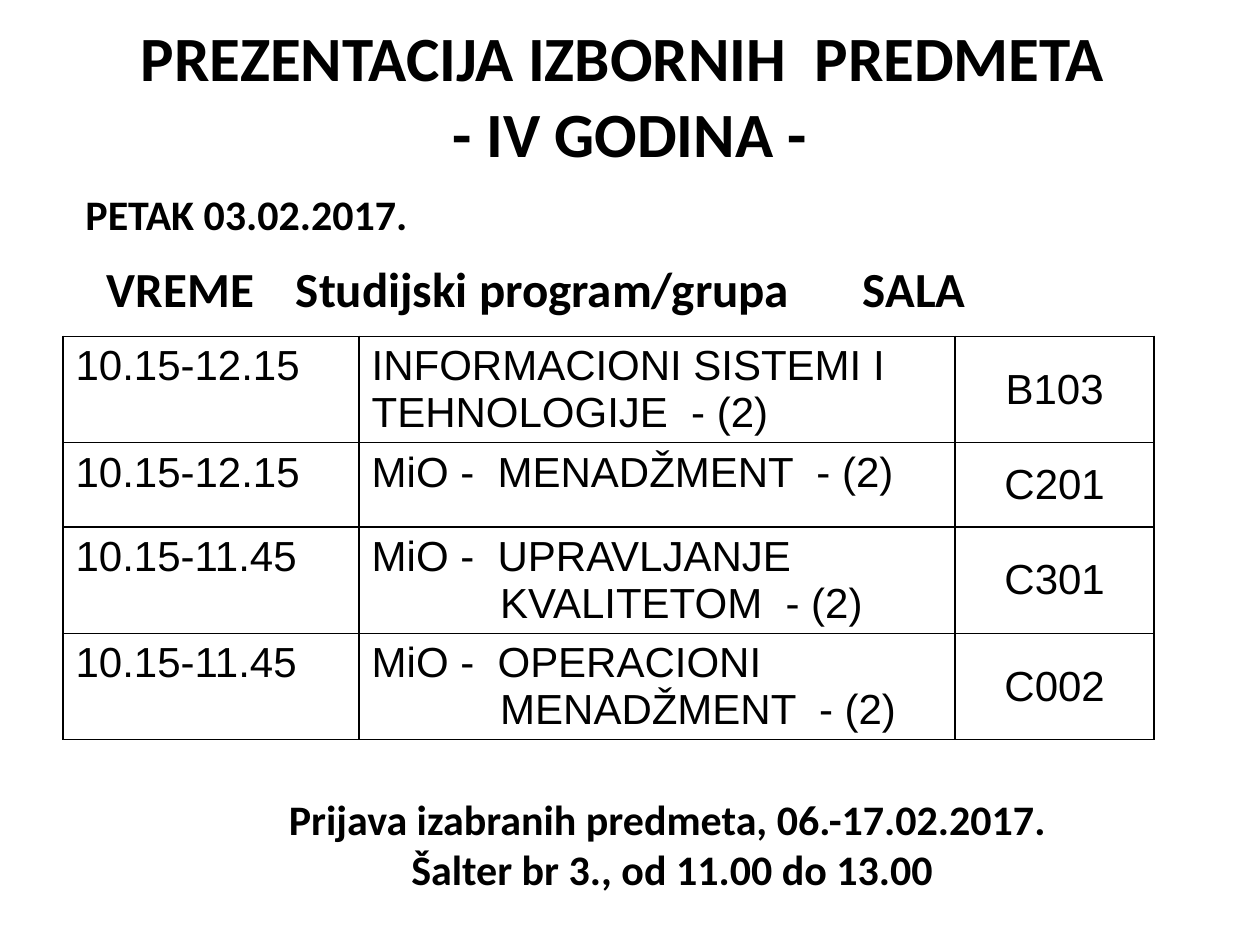
from dataclasses import dataclass

from lxml.etree import SubElement
from pptx import Presentation
from pptx.dml.color import RGBColor
from pptx.enum.text import MSO_ANCHOR, PP_ALIGN
from pptx.oxml.ns import qn
from pptx.slide import Slide
from pptx.table import _Cell
from pptx.text.text import _Paragraph
from pptx.util import Inches, Pt

WIDTH, HEIGHT = 10, 7.5
COLORS = {"ink": "000000"}
HANGING = 0.38      # hanging indent of single-line cells
CONTINUATION = 1.02  # indent of a subject's second line


@dataclass
class Caption:
    """A bold caption; the box is given as shares of the slide."""
    lines: list[str]
    left: float
    top: float
    width: float
    height: float
    size: int
    align: PP_ALIGN = PP_ALIGN.LEFT
    anchor: MSO_ANCHOR = MSO_ANCHOR.TOP
    wrap: bool = True


@dataclass
class Session:
    """One row of the timetable."""
    time: str
    subject: list[str]
    room: str
    height: float = 0.84


CAPTIONS = [
    Caption(["PREZENTACIJA IZBORNIH  PREDMETA \n- IV GODINA -"], 0, 0, 1, 0.2, 36,
            PP_ALIGN.CENTER, MSO_ANCHOR.MIDDLE),
    Caption(["PETAK 03.02.2017."], 0.058, 0.193, 0.278, 0.067, 24, wrap=False),
    Caption(["VREME\tStudijski program/grupa\t\tSALA"], 0.075, 0.267, 0.809, 0.076, 28,
            wrap=False),
    Caption(["Prijava izabranih predmeta, 06.-17.02.2017. ",
             "Šalter br 3., od 11.00 do 13.00"], 0.117, 0.833, 0.833, 0.121, 24,
            PP_ALIGN.CENTER),
]

SESSIONS = [
    Session("10.15-12.15", ["INFORMACIONI SISTEMI I TEHNOLOGIJE  - (2)"], "B103"),
    Session("10.15-12.15", ["MiO -  MENADŽMENT  - (2)"], "C201", 0.67),
    Session("10.15-11.45", ["MiO -  UPRAVLJANJE", "KVALITETOM  - (2)"], "C301"),
    Session("10.15-11.45", ["MiO -  OPERACIONI", "MENADŽMENT  - (2)"], "C002"),
]
COLUMN_WIDTHS = [2.35, 4.73, 1.58]


def style_runs(paragraph: _Paragraph, font: str, size: int, bold: bool) -> None:
    for run in paragraph.runs:
        run.font.name = font
        run.font.size = Pt(size)
        run.font.bold = bold
        run.font.color.rgb = RGBColor.from_string(COLORS["ink"])


def indent(paragraph: _Paragraph, left: float, first: float = 0) -> None:
    properties = paragraph._p.get_or_add_pPr()
    properties.set("marL", str(Inches(left)))
    properties.set("indent", str(Inches(first)))


def draw_caption(slide: Slide, caption: Caption) -> None:
    box = slide.shapes.add_textbox(
        Inches(caption.left * WIDTH), Inches(caption.top * HEIGHT),
        Inches(caption.width * WIDTH), Inches(caption.height * HEIGHT))
    frame = box.text_frame
    frame.word_wrap = caption.wrap
    frame.vertical_anchor = caption.anchor
    for number, line in enumerate(caption.lines):
        paragraph = frame.add_paragraph() if number else frame.paragraphs[0]
        paragraph.text = line
        paragraph.alignment = caption.align
        style_runs(paragraph, "Calibri", caption.size, True)


def draw_borders(cell: _Cell) -> None:
    properties = cell._tc.get_or_add_tcPr()
    for side in ("a:lnL", "a:lnR", "a:lnT", "a:lnB"):
        line = SubElement(properties, qn(side), w=str(Pt(1)))
        fill = SubElement(line, qn("a:solidFill"))
        SubElement(fill, qn("a:srgbClr"), val=COLORS["ink"])


def fill_cell(cell: _Cell, lines: list[str], centered: bool = False) -> None:
    draw_borders(cell)
    cell.fill.background()
    cell.vertical_anchor = MSO_ANCHOR.MIDDLE if centered else MSO_ANCHOR.TOP
    cell.text_frame.text = "\n".join(lines)
    for number, paragraph in enumerate(cell.text_frame.paragraphs):
        paragraph.alignment = PP_ALIGN.CENTER if centered else PP_ALIGN.LEFT
        if number:
            indent(paragraph, CONTINUATION)
        elif len(lines[0]) < 25:
            indent(paragraph, HANGING, -HANGING)
        style_runs(paragraph, "Arial", 24, False)


def draw_timetable(slide: Slide, sessions: list[Session]) -> None:
    table = slide.shapes.add_table(
        len(sessions), len(COLUMN_WIDTHS), Inches(0.5), Inches(2.67),
        Inches(sum(COLUMN_WIDTHS)), Inches(sum(s.height for s in sessions))).table
    table.first_row = table.horz_banding = False
    for column, width in zip(table.columns, COLUMN_WIDTHS):
        column.width = Inches(width)
    for row, session in zip(table.rows, sessions):
        row.height = Inches(session.height)
        time, subject, room = row.cells
        fill_cell(time, [session.time])
        fill_cell(subject, session.subject)
        fill_cell(room, [session.room], centered=True)


def main() -> None:
    presentation = Presentation()
    presentation.slide_width = Inches(WIDTH)
    presentation.slide_height = Inches(HEIGHT)
    slide = presentation.slides.add_slide(presentation.slide_layouts[6])
    # Timetable of the presentations
    draw_timetable(slide, SESSIONS)
    # Title, date, column headings and registration note
    for caption in CAPTIONS:
        draw_caption(slide, caption)
    presentation.save("out.pptx")


if __name__ == "__main__":
    main()
